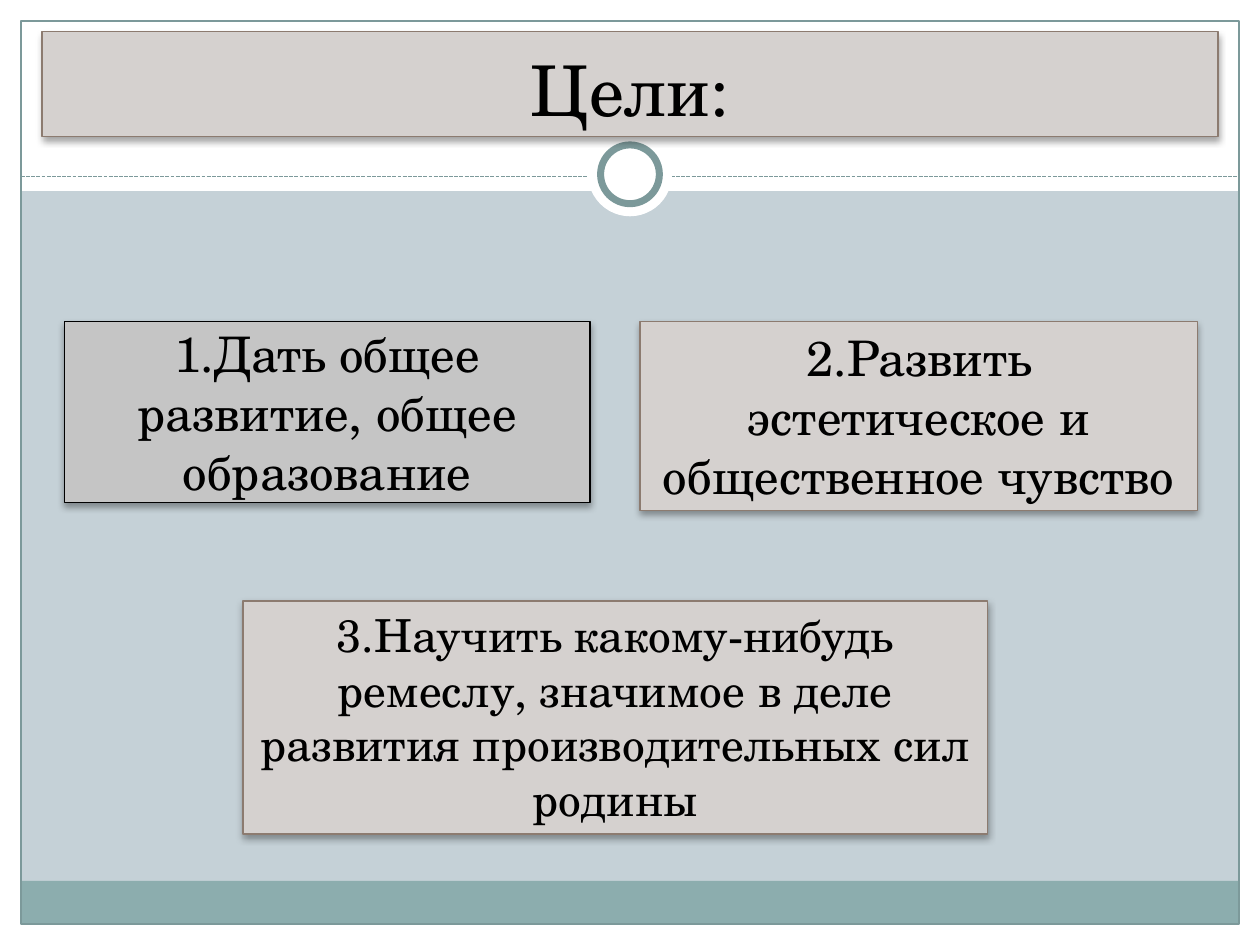
from lxml.etree import SubElement
from pptx import Presentation
from pptx.dml.color import RGBColor
from pptx.enum.dml import MSO_LINE
from pptx.enum.shapes import MSO_CONNECTOR, MSO_SHAPE
from pptx.enum.text import MSO_ANCHOR, PP_ALIGN
from pptx.oxml.ns import qn
from pptx.util import Inches, Pt

COLS, ROWS = 60, 45
WHITE, TEAL, SAND, BROWN = "FFFFFF", "7C999A", "D5D1CF", "8C7B70"
GREY, BLACK = "C5C5C5", "000000"


def color(code):
    return RGBColor.from_string(code)


def write(frame, text, size=28, font="TeX Gyre Schola", ink=BLACK,
          align=PP_ALIGN.CENTER, anchor=MSO_ANCHOR.TOP):
    frame.word_wrap = True
    frame.vertical_anchor = anchor
    para = frame.paragraphs[0]
    para.alignment = align
    run = para.add_run()
    run.text = text
    run.font.size = Pt(size)
    run.font.name = font
    run.font.color.rgb = color(ink)


class Deck:
    def __init__(self, back):
        self.prs = Presentation()
        self.prs.slide_width = Inches(10)
        self.prs.slide_height = Inches(7.5)
        self.slide = self.prs.slides.add_slide(self.prs.slide_layouts[6])
        fill = self.slide.background.fill
        fill.solid()
        fill.fore_color.rgb = color(back)

    def x(self, col):
        return round(self.prs.slide_width * col / COLS)

    def y(self, row):
        return round(self.prs.slide_height * row / ROWS)

    def shape(self, col, row, wide, high, fill=None, line=None, width=0.75,
              kind=MSO_SHAPE.RECTANGLE):
        item = self.slide.shapes.add_shape(
            kind, self.x(col), self.y(row), self.x(wide), self.y(high))
        item.shadow.inherit = False
        if fill:
            item.fill.solid()
            item.fill.fore_color.rgb = color(fill)
        else:
            item.fill.background()
        if line:
            item.line.color.rgb = color(line)
            item.line.width = Pt(width)
        else:
            item.line.fill.background()
        return item

    def ring(self, mid, row, size, **look):
        return self.shape(mid - size / 2, row - size / 2, size, size,
                          kind=MSO_SHAPE.OVAL, **look)

    def rule(self, row, start, end, line):
        item = self.slide.shapes.add_connector(
            MSO_CONNECTOR.STRAIGHT, self.x(start), self.y(row),
            self.x(end), self.y(row))
        item.line.color.rgb = color(line)
        item.line.width = Pt(0.75)
        item.line.dash_style = MSO_LINE.SQUARE_DOT
        SubElement(item._element.spPr, qn("a:effectLst"))

    def card(self, text, area, fill=SAND, line=BROWN, **style):
        item = self.shape(*area, fill=fill, line=line)
        glow = item._element.spPr.find(qn("a:effectLst"))
        shade = SubElement(glow, qn("a:outerShdw"), blurRad=str(Pt(4)),
                           dist=str(Pt(2)), dir="5400000", rotWithShape="0")
        tint = SubElement(shade, qn("a:srgbClr"), val=BLACK)
        SubElement(tint, qn("a:alpha"), val="35000")
        write(item.text_frame, text, **style)

    def save(self):
        self.prs.save("out.pptx")


def main():
    deck = Deck("C5D1D7")
    edges = [(0, ROWS - 1, COLS, 1), (0, 0, COLS, 9.1),
             (0, 0, 1, ROWS), (COLS - 1, 0, 1, ROWS)]
    for edge in edges:
        deck.shape(*edge, fill=WHITE)
    deck.shape(1, 41.95, COLS - 2, 2.05, fill="8CADAE")
    deck.shape(1, 1, COLS - 2, ROWS - 2, line=TEAL)
    deck.rule(8.4, 1, COLS - 1, TEAL)
    deck.ring(COLS / 2, 8.3, 4, fill=WHITE)
    deck.ring(COLS / 2, 8.3, 2.8, fill=WHITE, line=TEAL, width=4)

    deck.card("Цели:", (2, 1.5, COLS - 4, 5), size=40,
              anchor=MSO_ANCHOR.BOTTOM)
    deck.card("1.Дать общее развитие, общее образование",
              (3.06, 15.3, 25.04, 8.64), fill=GREY, line=BLACK,
              anchor=MSO_ANCHOR.MIDDLE)
    deck.card("3.Научить какому-нибудь ремеслу, значимое в деле "
              "развития производительных сил родины",
              (11.57, 28.62, 35.46, 11.1), size=26)
    deck.card("2.Развить эстетическое и общественное чувство",
              (30.48, 15.3, 26.54, 9))
    deck.save()


if __name__ == "__main__":
    main()
